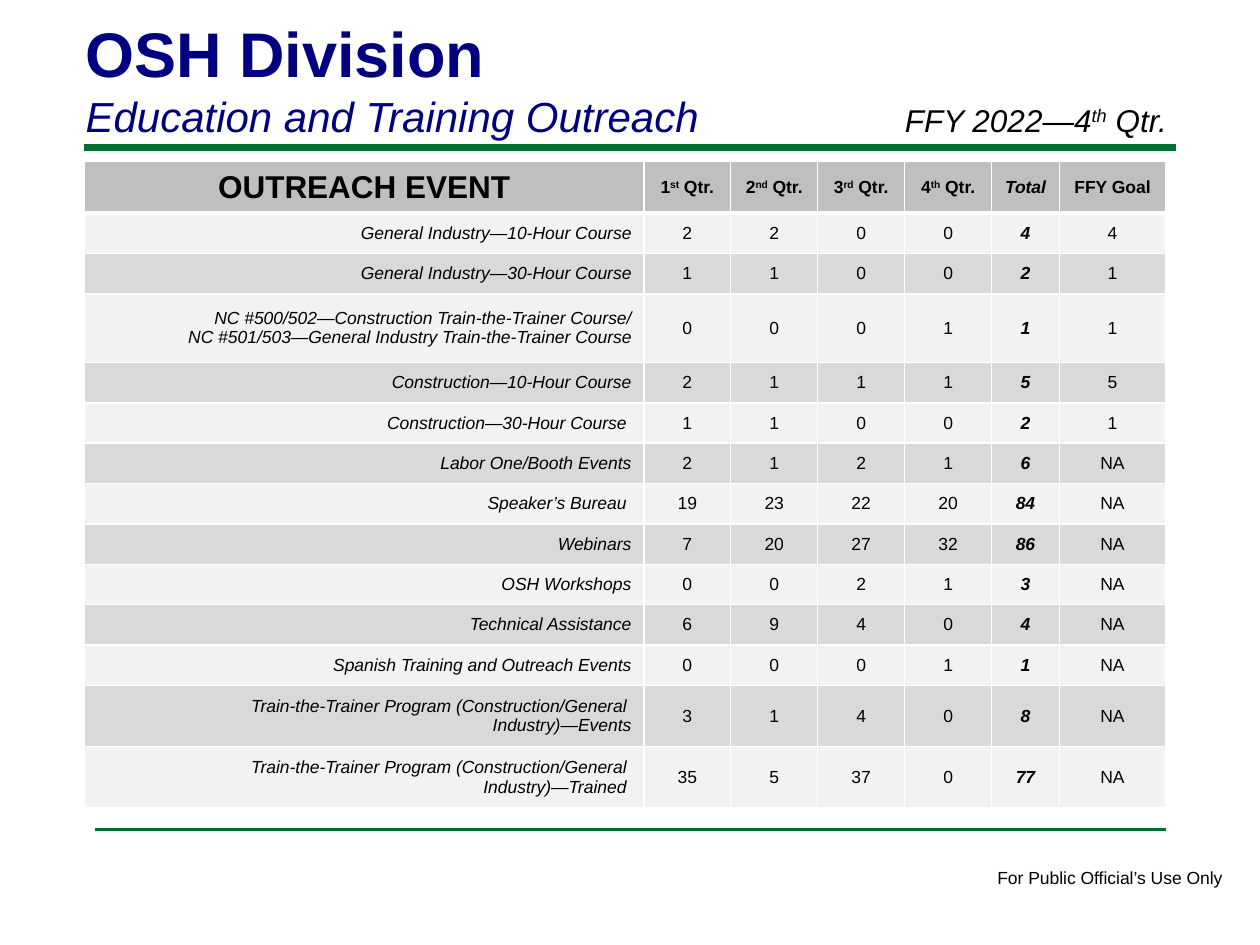
from dataclasses import dataclass
from typing import Any

import pptx
import pptx.dml.color
import pptx.enum.shapes
import pptx.enum.text
import pptx.oxml.ns
import pptx.util
from lxml import etree

Pt = pptx.util.Pt
Align = pptx.enum.text.PP_ALIGN
Anchor = pptx.enum.text.MSO_ANCHOR


@dataclass(frozen=True)
class Theme:
    font: str = "Arial"
    navy: str = "000080"
    black: str = "000000"
    green: str = "007030"
    border: str = "FFFFFF"
    header_fill: str = "BFBFBF"
    band_fills: tuple[str, str] = ("F2F2F2", "D9D9D9")
    title: float = 36
    subtitle: float = 24
    heading: float = 18
    body: float = 10


@dataclass(frozen=True)
class Style:
    size: float
    color: str
    bold: bool = False
    italic: bool = False


@dataclass(frozen=True)
class Line:
    """One paragraph; `raised` is a superscript between text and tail."""
    text: str
    style: Style
    raised: str = ""
    tail: str = ""


@dataclass(frozen=True)
class Label:
    left: float
    top: float
    width: float
    height: float
    lines: tuple[Line, ...]
    wrap: bool = True
    anchor: Any = Anchor.TOP


@dataclass(frozen=True)
class Rule:
    left: float
    right: float
    y: float
    weight: float


@dataclass(frozen=True)
class Outreach:
    event: str
    quarters: tuple[int, int, int, int]
    total: int
    goal: str = "NA"
    height: float = 23.1


THEME = Theme()
BODY = Style(THEME.body, THEME.black)
BODY_ITALIC = Style(THEME.body, THEME.black, italic=True)
BODY_BOLD = Style(THEME.body, THEME.black, bold=True)
TOTAL = Style(THEME.body, THEME.black, bold=True, italic=True)

RULES = (Rule(48, 672, 84.1, 4), Rule(54, 666, 474, 2))
LABELS = (
    Label(562.8, 491.8, 145, 19.4, (Line("For Public Official’s Use Only", BODY),), wrap=False),
    Label(41.8, 4.3, 594, 80, (
        Line("OSH Division", Style(THEME.title, THEME.navy, bold=True)),
        Line("Education and Training Outreach", Style(THEME.subtitle, THEME.navy, italic=True)),
    ), anchor=Anchor.MIDDLE),
    Label(510, 54, 180, 29, (
        Line("FFY 2022—4", Style(THEME.heading, THEME.black, italic=True), "th", " Qtr."),
    )),
)

TABLE_LEFT, TABLE_TOP = 48.4, 92.4
COLUMN_WIDTHS = (319.5, *[49.7] * 4, 38.7, 60.7)
HEADER_HEIGHT = 29.4
HEADER = (
    Line("OUTREACH EVENT", Style(THEME.heading, THEME.black, bold=True)),
    *(Line(str(number), BODY_BOLD, suffix, " Qtr.")
      for number, suffix in enumerate(("st", "nd", "rd", "th"), start=1)),
    Line("Total", TOTAL),
    Line("FFY Goal", BODY_BOLD),
)
EVENTS = (
    Outreach("General Industry—10-Hour Course", (2, 2, 0, 0), 4, "4"),
    Outreach("General Industry—30-Hour Course", (1, 1, 0, 0), 2, "1"),
    Outreach("NC #500/502—Construction Train-the-Trainer Course/\n"
             "NC #501/503—General Industry Train-the-Trainer Course", (0, 0, 0, 1), 1, "1", 39.2),
    Outreach("Construction—10-Hour Course", (2, 1, 1, 1), 5, "5"),
    Outreach("Construction—30-Hour Course ", (1, 1, 0, 0), 2, "1"),
    Outreach("Labor One/Booth Events", (2, 1, 2, 1), 6),
    Outreach("Speaker’s Bureau ", (19, 23, 22, 20), 84),
    Outreach("Webinars", (7, 20, 27, 32), 86),
    Outreach("OSH Workshops", (0, 0, 2, 1), 3),
    Outreach("Technical Assistance", (6, 9, 4, 0), 4),
    Outreach("Spanish Training and Outreach Events", (0, 0, 0, 1), 1),
    Outreach("Train-the-Trainer Program (Construction/General \nIndustry)—Events",
             (3, 1, 4, 0), 8, height=35),
    Outreach("Train-the-Trainer Program (Construction/General \nIndustry)—Trained ",
             (35, 5, 37, 0), 77, height=35),
)


def rgb(color: str) -> pptx.dml.color.RGBColor:
    return pptx.dml.color.RGBColor.from_string(color)


def write_lines(frame: Any, lines: tuple[Line, ...], align: Any = Align.LEFT) -> None:
    for index, line in enumerate(lines):
        para = frame.paragraphs[0] if index == 0 else frame.add_paragraph()
        para.alignment = align
        style = line.style
        formats = {"name": THEME.font, "size": Pt(style.size),
                   "bold": style.bold, "italic": style.italic}
        for text, raised in ((line.text, False), (line.raised, True), (line.tail, False)):
            if not text:
                continue
            span = para.add_run()
            span.text = text
            for name, value in formats.items():
                setattr(span.font, name, value)
            span.font.color.rgb = rgb(style.color)
            if raised:
                span._r.get_or_add_rPr().set("baseline", "30000")


def draw_rule(page: Any, rule: Rule) -> None:
    connector = page.shapes.add_connector(
        pptx.enum.shapes.MSO_CONNECTOR.STRAIGHT,
        Pt(rule.left), Pt(rule.y), Pt(rule.right), Pt(rule.y))
    connector.line.color.rgb = rgb(THEME.green)
    connector.line.width = Pt(rule.weight)
    etree.SubElement(connector._element.spPr, pptx.oxml.ns.qn("a:effectLst"))


def draw_label(page: Any, label: Label) -> None:
    box = page.shapes.add_textbox(Pt(label.left), Pt(label.top), Pt(label.width), Pt(label.height))
    formats = {"word_wrap": label.wrap, "vertical_anchor": label.anchor,
               "auto_size": pptx.enum.text.MSO_AUTO_SIZE.SHAPE_TO_FIT_TEXT}
    for name, value in formats.items():
        setattr(box.text_frame, name, value)
    write_lines(box.text_frame, label.lines)


def set_borders(cell: Any, weights: dict[str, float]) -> None:
    """Add the cell's edges; call before filling, as the schema wants edges first."""
    properties = cell._tc.get_or_add_tcPr()
    for side, weight in weights.items():
        edge = etree.SubElement(properties, pptx.oxml.ns.qn(f"a:ln{side}"), w=str(Pt(weight)))
        fill = etree.SubElement(edge, pptx.oxml.ns.qn("a:solidFill"))
        etree.SubElement(fill, pptx.oxml.ns.qn("a:srgbClr"), val=THEME.border)


def event_cells(event: Outreach) -> list[tuple[Line, ...]]:
    return [
        tuple(Line(text, BODY_ITALIC) for text in event.event.split("\n")),
        *((Line(str(count), BODY),) for count in event.quarters),
        (Line(str(event.total), TOTAL),),
        (Line(event.goal, BODY),),
    ]


def draw_table(page: Any) -> None:
    rows = [[(line,) for line in HEADER], *map(event_cells, EVENTS)]
    heights = [HEADER_HEIGHT, *(event.height for event in EVENTS)]
    table = page.shapes.add_table(
        len(rows), len(COLUMN_WIDTHS), Pt(TABLE_LEFT), Pt(TABLE_TOP),
        Pt(sum(COLUMN_WIDTHS)), Pt(sum(heights))).table
    table.horz_banding = False
    for column, width in zip(table.columns, COLUMN_WIDTHS):
        column.width = Pt(width)
    for r, (row, height) in enumerate(zip(rows, heights)):
        table.rows[r].height = Pt(height)
        fill = THEME.band_fills[(r - 1) % 2] if r else THEME.header_fill
        for c, lines in enumerate(row):
            cell = table.cell(r, c)
            set_borders(cell, {"L": 1, "R": 1, "T": 3 if r == 1 else 1, "B": 3 if r == 0 else 1})
            cell.fill.solid()
            cell.fill.fore_color.rgb = rgb(fill)
            cell.vertical_anchor = Anchor.MIDDLE
            write_lines(cell.text_frame, lines, Align.RIGHT if r and c == 0 else Align.CENTER)


def main() -> None:
    deck = pptx.Presentation()
    deck.slide_width, deck.slide_height = Pt(720), Pt(540)
    page = deck.slides.add_slide(deck.slide_layouts[6])
    for rule in RULES:
        draw_rule(page, rule)
    for label in LABELS:
        draw_label(page, label)
    draw_table(page)
    deck.save("out.pptx")


if __name__ == "__main__":
    main()
